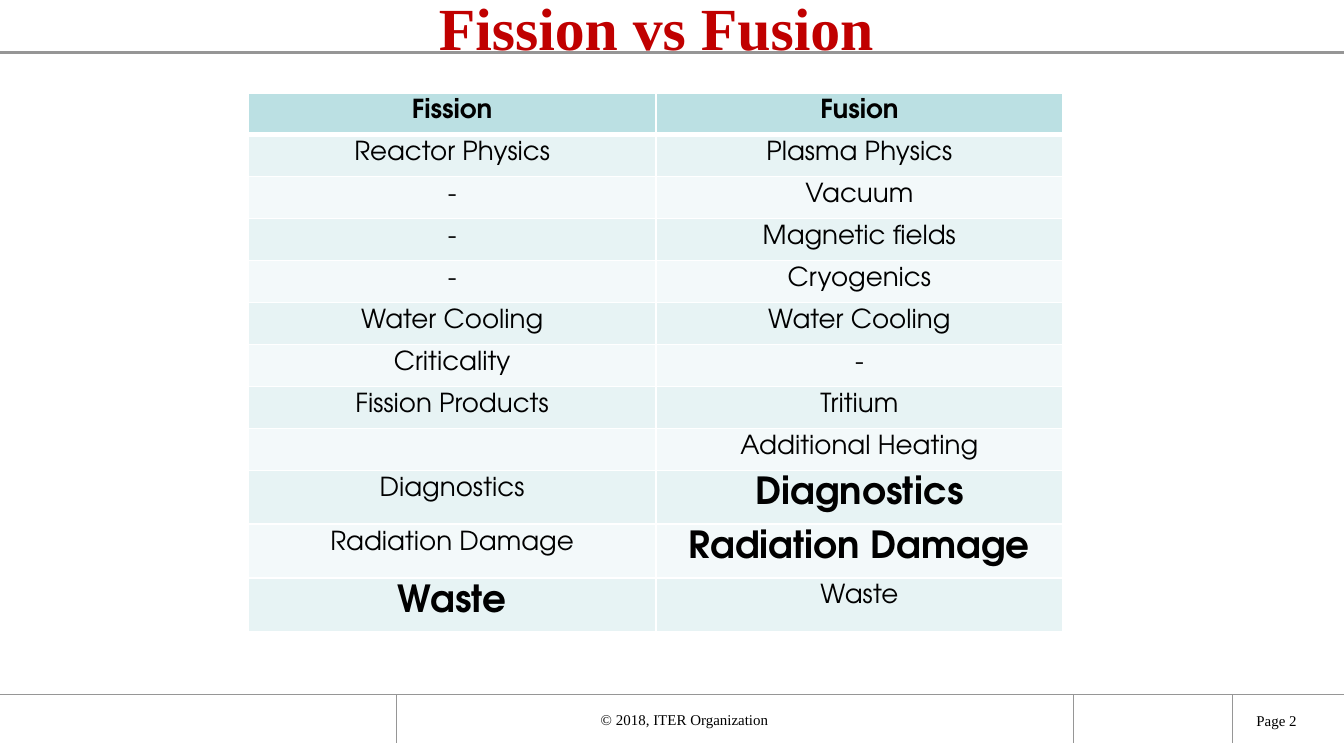
from pptx import Presentation
from pptx.dml.color import RGBColor
from pptx.enum.shapes import MSO_CONNECTOR
from pptx.enum.text import MSO_ANCHOR, PP_ALIGN
from pptx.oxml.ns import qn
from pptx.util import Inches, Pt
from lxml import etree

LINE = MSO_CONNECTOR.STRAIGHT
MIDDLE = MSO_ANCHOR.MIDDLE
LEFT, CENTER = PP_ALIGN.LEFT, PP_ALIGN.CENTER

BLACK = RGBColor(0x00, 0x00, 0x00)
WHITE = RGBColor(0xFF, 0xFF, 0xFF)
RED = RGBColor(0xC0, 0x00, 0x00)
GRAY = RGBColor(0x96, 0x96, 0x96)
HEAD = RGBColor(0xBB, 0xE0, 0xE3)
BANDS = RGBColor(0xF3, 0xF9, 0xFA), RGBColor(0xE7, 0xF3, 0xF4)

SERIF, SANS = "Times New Roman", "TeX Gyre Adventor"
WIDE = 10
HIGH = WIDE * 9 / 16
SMALL, LARGE = 14, 20

ROWS = [
    ("Fission", "Fusion"),
    ("Reactor Physics", "Plasma Physics"),
    ("-", "Vacuum"),
    ("-", "Magnetic fields"),
    ("-", "Cryogenics"),
    ("Water Cooling", "Water Cooling"),
    ("Criticality", "-"),
    ("Fission Products", "Tritium"),
    ("", "Additional Heating"),
    ("Diagnostics", "Diagnostics"),
    ("Radiation Damage", "Radiation Damage"),
    ("Waste", "Waste"),
]
STRONG = {(9, 1), (10, 1), (11, 0)}  # row, column of the large bold cells
TALL = {row for row, _ in STRONG}


def add_run(para, text, size, face, color=BLACK, bold=False):
    run = para.add_run()
    run.text = text
    font = run.font
    font.size, font.name, font.bold = Pt(size), face, bold
    font.color.rgb = color


def add_line(slide, x1, y1, x2, y2, width):
    line = slide.shapes.add_connector(LINE, *map(Inches, (x1, y1, x2, y2)))
    line.line.color.rgb = GRAY
    line.line.width = Pt(width)
    etree.SubElement(line._element.spPr, qn("a:effectLst"))


def add_label(slide, box, text, size, align, color=BLACK, bold=False,
              pad=None, stop=None):
    frame = slide.shapes.add_textbox(*map(Inches, box)).text_frame
    frame.word_wrap = True
    frame.vertical_anchor = MIDDLE
    if pad is not None:
        frame.margin_left = frame.margin_right = Inches(pad)
        frame.margin_top = frame.margin_bottom = 0
    para = frame.paragraphs[0]
    para.alignment = align
    if stop is not None:
        tabs = etree.SubElement(para._p.get_or_add_pPr(), qn("a:tabLst"))
        etree.SubElement(tabs, qn("a:tab"), pos=str(Inches(stop)), algn="l")
    add_run(para, text, size, SERIF, color, bold)


def set_edges(cell, base):
    """White borders, with a width in points for the bottom edge."""
    props = cell._tc.get_or_add_tcPr()
    for spot, (side, width) in enumerate(
            (("L", 1), ("R", 1), ("T", 1), ("B", base))):
        edge = etree.Element(qn(f"a:ln{side}"), w=str(Pt(width)))
        fill = etree.SubElement(edge, qn("a:solidFill"))
        etree.SubElement(fill, qn("a:srgbClr"), val=str(WHITE))
        props.insert(spot, edge)


def add_header(slide, box):
    left, top, width, high = box
    add_line(slide, left, top + high, left + width, top + high, 1.25)
    add_label(slide, (left + 0.51, top - 0.18, 8.75, 0.75),
              "Fission vs Fusion", 32, CENTER, RED, True)


def add_matrix(slide, box):
    left, top, width, high = box
    grid = slide.shapes.add_table(
        len(ROWS), 2, *map(Inches, (left, top, width, high))).table
    for col in grid.columns:
        col.width = Inches(width / 2)
    tall = 0.4
    short = (high - tall * len(TALL)) / (len(ROWS) - len(TALL))
    for r, texts in enumerate(ROWS):
        grid.rows[r].height = Inches(tall if r in TALL else short)
        for c, text in enumerate(texts):
            cell = grid.cell(r, c)
            cell.margin_top = Inches(0.05 if text else 0)
            cell.margin_bottom = 0
            cell.fill.solid()
            cell.fill.fore_color.rgb = BANDS[r % 2] if r else HEAD
            set_edges(cell, 1 if r else 3)
            para = cell.text_frame.paragraphs[0]
            para.alignment = CENTER
            if text:
                big = (r, c) in STRONG
                add_run(para, text, LARGE if big else SMALL, SANS,
                        bold=big or r == 0)


def add_footer(slide, box):
    left, top, width, high = box
    first, second, third = left + 2.95, left + 7.99, left + 9.17
    add_line(slide, left, top, left + width, top, 0.5)
    for x in (first, second, third):
        add_line(slide, x, top, x, top + high, 0.5)
    # The closing tab shifts the centred notice to the left
    add_label(slide, (first, top + 0.12, second - first, 0.13),
              "© 2018, ITER Organization\t", 8, CENTER, pad=0.04, stop=2)
    add_label(slide, (third + 0.08, top + 0.07, 0.64, 0.24),
              "Page 2", 8, LEFT)


def main():
    deck = Presentation()
    deck.slide_width, deck.slide_height = Inches(WIDE), Inches(HIGH)
    slide = deck.slides.add_slide(deck.slide_layouts[6])
    add_header(slide, (0, 0, WIDE, 0.39))
    add_footer(slide, (0, 5.17, WIDE, 0.36))
    add_matrix(slide, (1.85, 0.69, 6.06, 4.01))
    deck.save("out.pptx")


if __name__ == "__main__":
    main()
